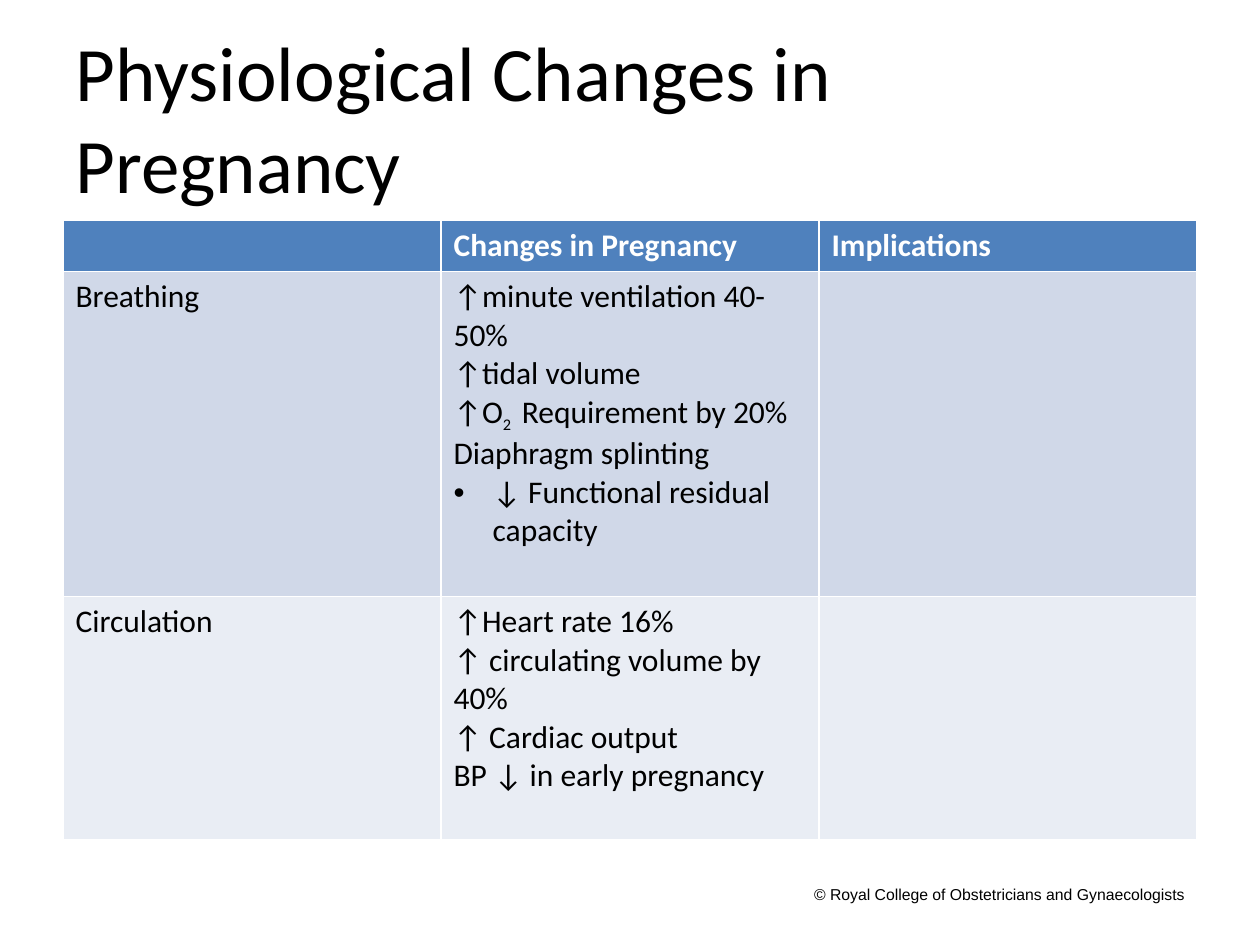
from dataclasses import dataclass

from lxml.etree import SubElement
from pptx import Presentation
from pptx.dml.color import RGBColor
from pptx.enum.text import MSO_ANCHOR as Anchor, MSO_AUTO_SIZE as AutoSize, PP_ALIGN as Align
from pptx.oxml.ns import qn
from pptx.util import Inches, Pt

BLACK = RGBColor(0x00, 0x00, 0x00)
WHITE = RGBColor(0xFF, 0xFF, 0xFF)
HEADER_BLUE = RGBColor(0x4F, 0x81, 0xBD)
BAND_DARK = RGBColor(0xD0, 0xD8, 0xE8)
BAND_LIGHT = RGBColor(0xE9, 0xED, 0xF4)


@dataclass
class Line:
    text: str
    subscript: str = ""
    rest: str = ""
    bullet: bool = False


@dataclass
class Row:
    height: float
    fill: RGBColor
    cells: list[list[Line]]
    color: RGBColor = BLACK
    bold: bool = False


ROWS = [
    Row(0.4, HEADER_BLUE, [[], [Line("Changes in Pregnancy")], [Line("Implications")]],
        WHITE, True),
    Row(2.58, BAND_DARK, [
        [Line("Breathing")],
        [Line("↑minute ventilation 40-50%"),
         Line("↑tidal volume"),
         Line("↑O", "2 ", " Requirement by 20%"),
         Line("Diaphragm splinting"),
         Line("↓ Functional residual capacity", bullet=True)],
        []]),
    Row(1.93, BAND_LIGHT, [
        [Line("Circulation")],
        [Line("↑Heart rate 16%"),
         Line("↑ circulating volume by 40%"),
         Line("↑ Cardiac output"),
         Line("BP ↓ in early pregnancy")],
        []]),
]


def add_run(paragraph, text: str, size: float, color: RGBColor,
            name: str = "Calibri", bold: bool = False):
    run = paragraph.add_run()
    run.text = text
    for attribute, value in {"size": Pt(size), "name": name, "bold": bold}.items():
        setattr(run.font, attribute, value)
    run.font.color.rgb = color
    return run


def add_bullet(paragraph) -> None:
    properties = paragraph._p.get_or_add_pPr()
    properties.set("marL", str(Inches(0.31)))
    properties.set("indent", str(-Inches(0.31)))
    SubElement(properties, qn("a:buFont"), typeface="Arial")
    SubElement(properties, qn("a:buChar"), char="•")


def fill_cell(cell, lines: list[Line], row: Row) -> None:
    cell.fill.solid()
    cell.fill.fore_color.rgb = row.fill
    for index, line in enumerate(lines):
        frame = cell.text_frame
        paragraph = frame.add_paragraph() if index else frame.paragraphs[0]
        if line.bullet:
            add_bullet(paragraph)
        add_run(paragraph, line.text, 18, row.color, bold=row.bold)
        if line.subscript:
            run = add_run(paragraph, line.subscript, 16, row.color)
            run.font._element.set("baseline", "-25000")
            add_run(paragraph, line.rest, 18, row.color)


def place(shape, left: float, top: float, width: float, height: float) -> None:
    sides = {"left": left, "top": top, "width": width, "height": height}
    for side, value in sides.items():
        setattr(shape, side, Inches(value))


def format_frame(frame) -> None:
    settings = {"word_wrap": True, "auto_size": AutoSize.NONE,
                "vertical_anchor": Anchor.MIDDLE}
    for attribute, value in settings.items():
        setattr(frame, attribute, value)


def main() -> None:
    presentation = Presentation()
    presentation.slide_width = Inches(10)
    presentation.slide_height = Inches(7.5)
    slide = presentation.slides.add_slide(presentation.slide_layouts[5])

    # Title
    title = slide.shapes.title
    place(title, 0.5, 0.3, 6.63, 1.25)
    format_frame(title.text_frame)
    heading = title.text_frame.paragraphs[0]
    heading.alignment = Align.LEFT
    add_run(heading, "Physiological Changes in Pregnancy", 44, BLACK)

    # Table; its default style draws the white rules
    height = sum(row.height for row in ROWS)
    table = slide.shapes.add_table(len(ROWS), 3, Inches(0.5), Inches(1.75),
                                   Inches(9), Inches(height)).table
    for table_row, row in zip(table.rows, ROWS):
        table_row.height = Inches(row.height)
        for cell, lines in zip(table_row.cells, row.cells):
            fill_cell(cell, lines, row)

    # Copyright line
    footer = slide.shapes.add_textbox(Inches(6.18), Inches(6.9), Inches(3.32), Inches(0.4))
    format_frame(footer.text_frame)
    notice = footer.text_frame.paragraphs[0]
    notice.alignment = Align.RIGHT
    add_run(notice, "© Royal College of Obstetricians and Gynaecologists", 9, BLACK, "Arial")

    presentation.save("out.pptx")


if __name__ == "__main__":
    main()
